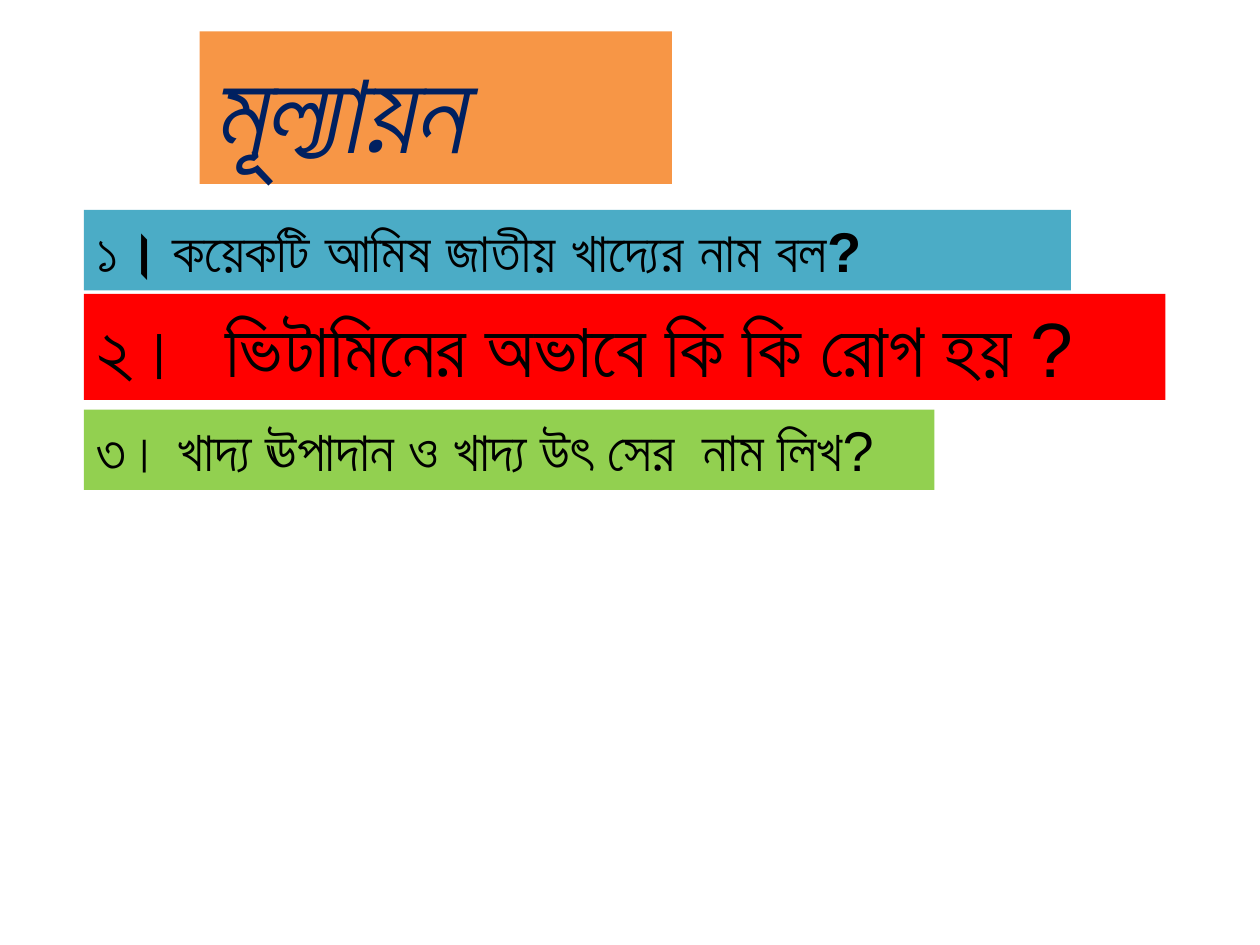
from pptx import Presentation
from pptx.dml.color import RGBColor as RGB
from pptx.enum.text import MSO_AUTO_SIZE as Fit
from pptx.util import Pt

COLORS = {
    "orange": "F79646",
    "teal": "4BACC6",
    "red": "FF0000",
    "green": "92D050",
    "navy": "002060",
    "black": "000000",
}
LEFT = 48
# text, top, width, height, fill, font size, bold
TASKS = [
    ("১। কয়েকটি আমিষ জাতীয় খাদ্যের নাম বল?", 120, 564, 46, "teal", 32, True),
    ("২।  ভিটামিনের অভাবে কি কি রোগ হয় ?", 168, 618, 60.6, "red", 44, False),
    ("৩। খাদ্য ঊপাদান ও খাদ্য উৎ সের  নাম লিখ?", 234, 486, 46, "green", 32, False),
]


def add_band(slide, text, box, fill, size, color="black", bold=False, italic=False):
    """Add a filled text box; box is left, top, width, height in points."""
    band = slide.shapes.add_textbox(*map(Pt, box))
    band.fill.solid()
    band.fill.fore_color.rgb = RGB.from_string(COLORS[fill])
    frame = band.text_frame
    frame.word_wrap = True
    frame.auto_size = Fit.SHAPE_TO_FIT_TEXT
    line = frame.paragraphs[0]
    line.text = text
    font = line.font
    font.name, font.size = "Arial", Pt(size)
    font.bold, font.italic = bold, italic
    font.color.rgb = RGB.from_string(COLORS[color])


def main():
    deck = Presentation()
    deck.slide_width, deck.slide_height = Pt(720), Pt(540)
    slide = deck.slides.add_slide(deck.slide_layouts[6])
    add_band(slide, "মূল্যায়ন", (114, 18, 270, 87.2), "orange", 66,
             "navy", bold=True, italic=True)
    for text, top, width, height, fill, size, bold in TASKS:
        add_band(slide, text, (LEFT, top, width, height), fill, size, bold=bold)
    deck.save("out.pptx")


if __name__ == "__main__":
    main()
